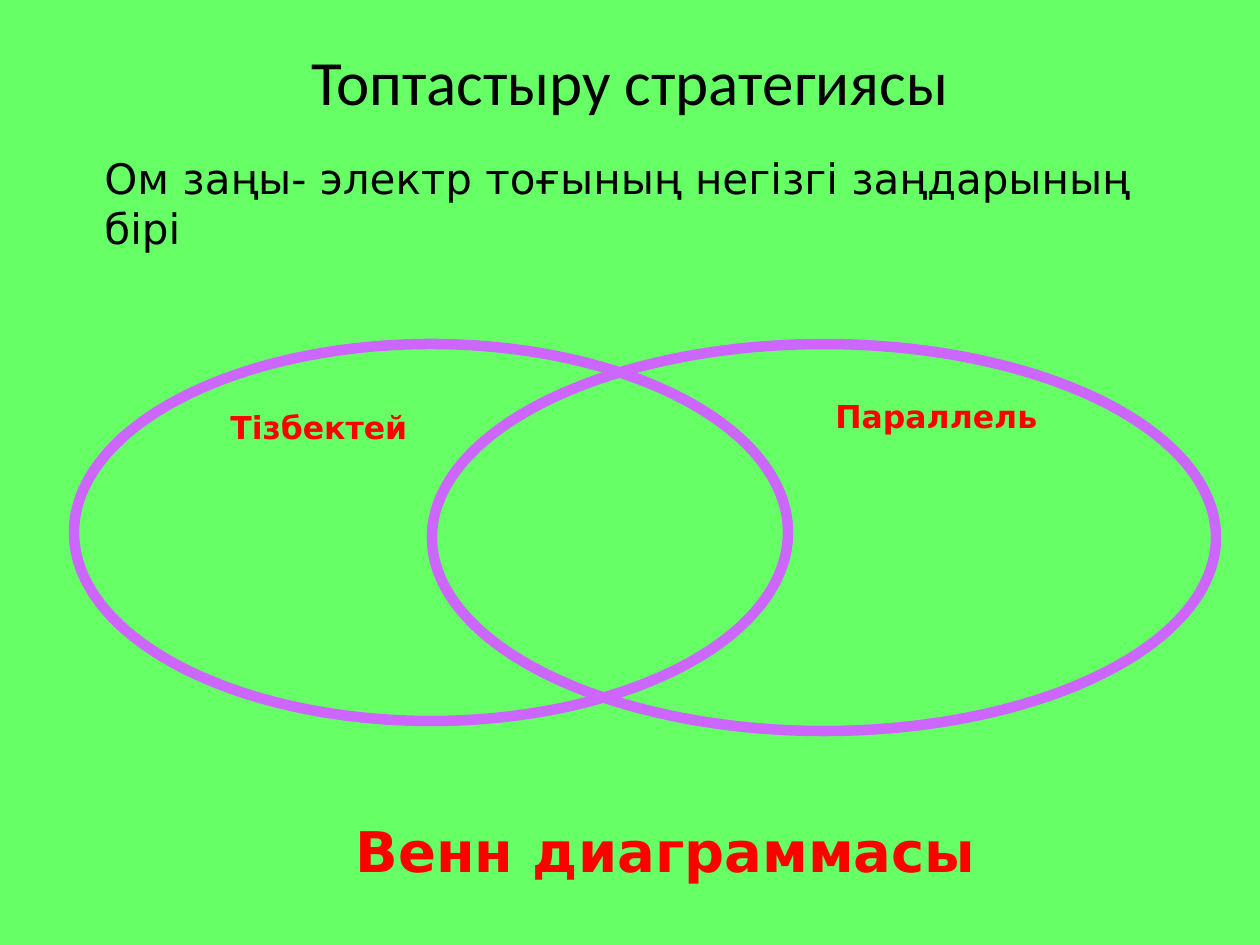
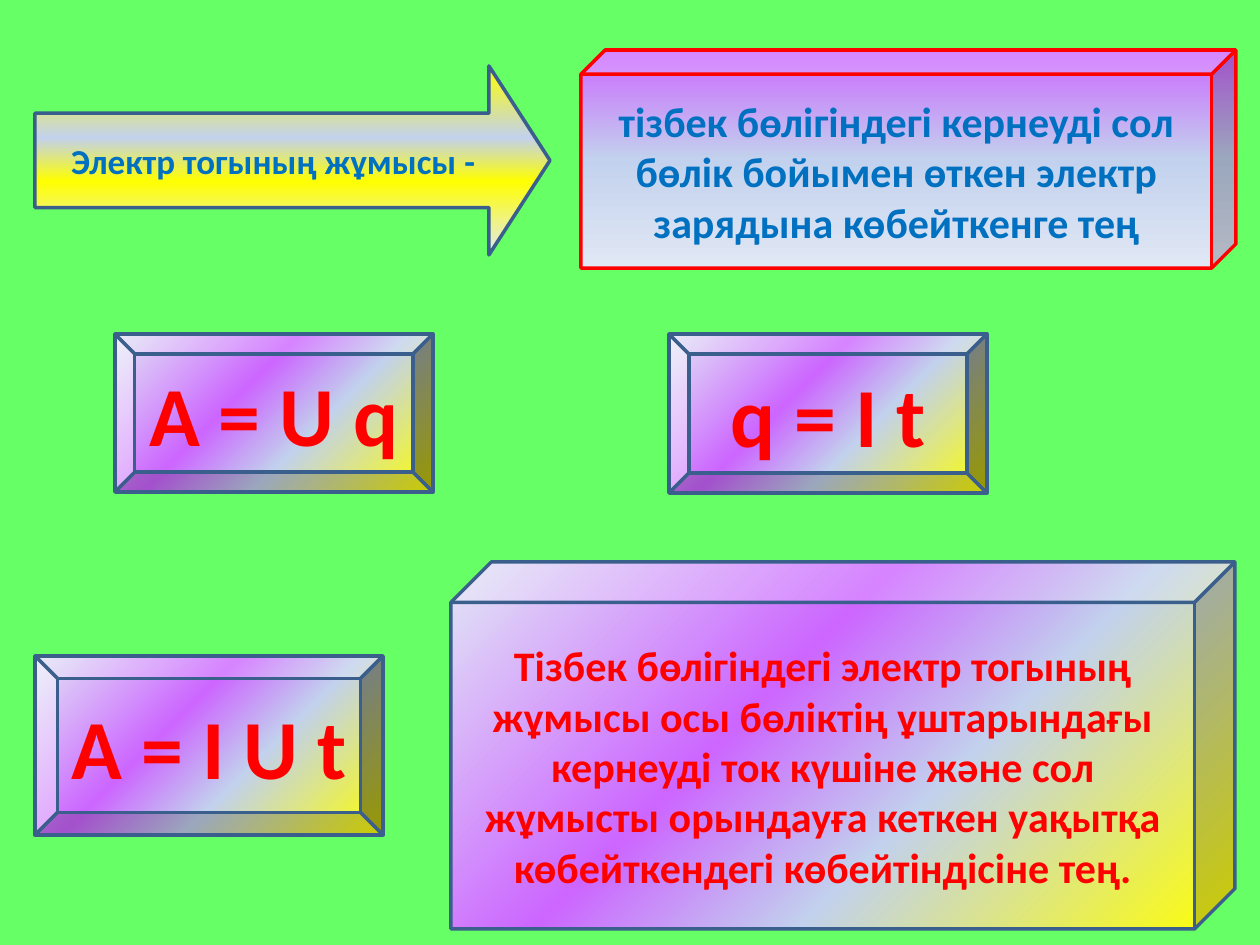
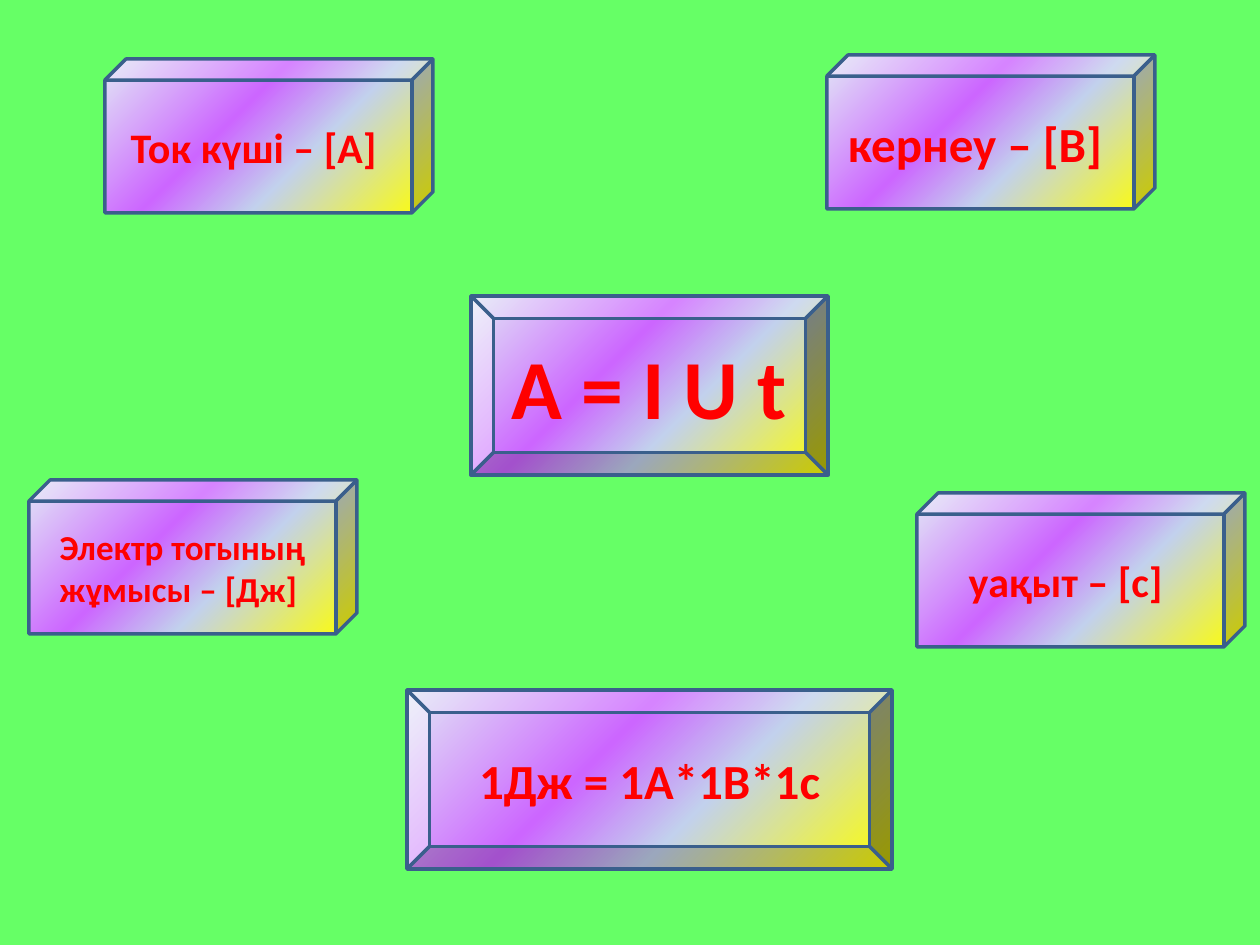
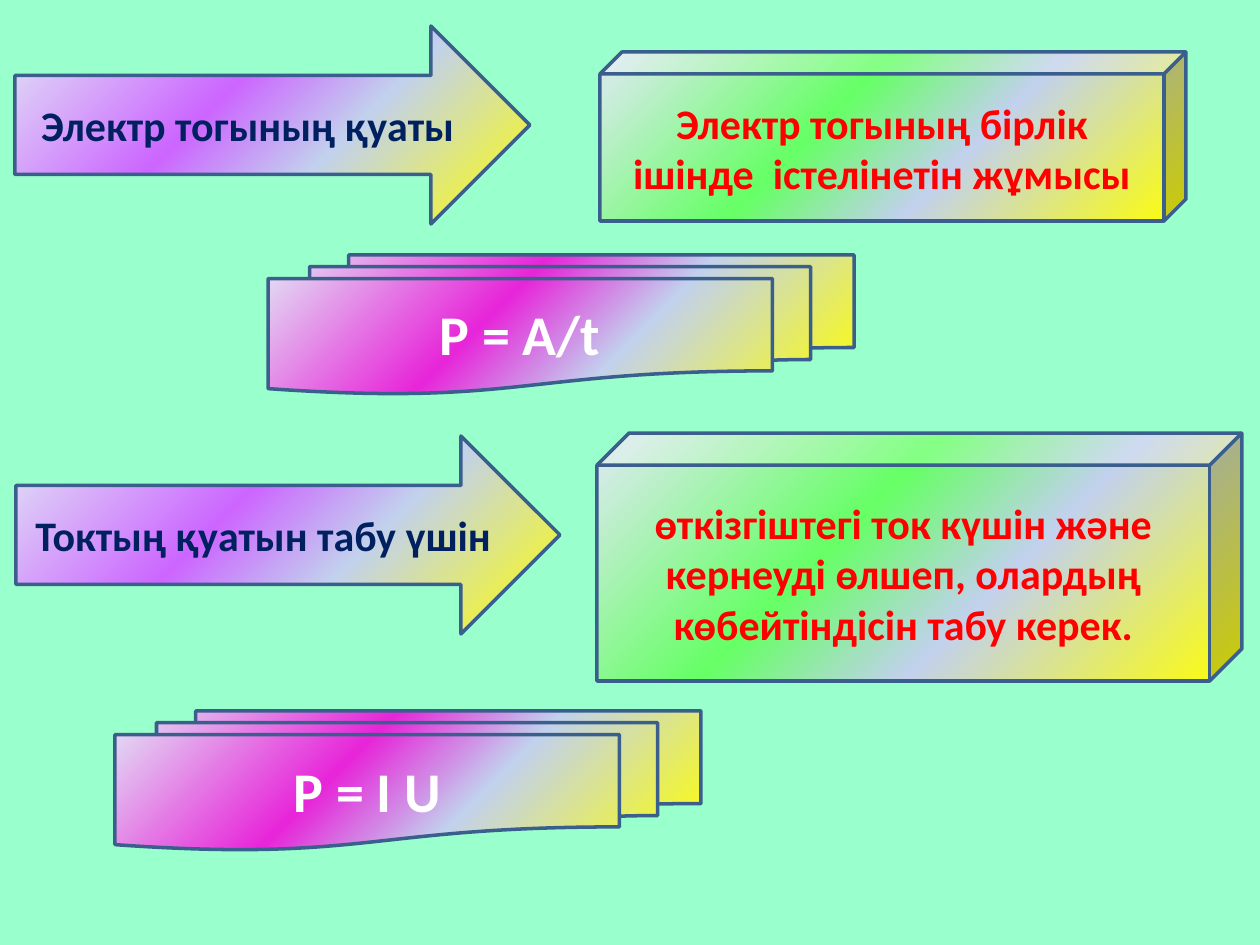
"""Build four slides on electric work and power with Venn, arrow and block shapes."""
from dataclasses import dataclass
from typing import Optional

from lxml.etree import SubElement
from pptx import Presentation
from pptx.dml.color import RGBColor
from pptx.enum.shapes import MSO_SHAPE
from pptx.enum.text import MSO_ANCHOR, MSO_AUTO_SIZE, PP_ALIGN
from pptx.oxml.ns import qn
from pptx.shapes.autoshape import Shape
from pptx.slide import Slide
from pptx.util import Pt

EMU_PER_PX = 914400 / 126
SLIDE_WIDTH, SLIDE_HEIGHT = 1260, 945
BLANK_LAYOUT = 6

GREEN = RGBColor(0x66, 0xFF, 0x66)
MINT = RGBColor(0x99, 0xFF, 0xCC)
VIOLET = RGBColor(0xCC, 0x66, 0xFF)
MAGENTA = RGBColor(0xE7, 0x25, 0xD9)
YELLOW = RGBColor(0xFF, 0xFF, 0x00)
PALE_BLUE = RGBColor(0xC2, 0xD1, 0xED)
ICE = RGBColor(0xE1, 0xE8, 0xF5)
RED = RGBColor(0xFF, 0x00, 0x00)
BLUE = RGBColor(0x00, 0x70, 0xC0)
NAVY = RGBColor(0x00, 0x20, 0x60)
OUTLINE = RGBColor(0x3A, 0x5F, 0x8C)
BLACK = RGBColor(0x00, 0x00, 0x00)
WHITE = RGBColor(0xFF, 0xFF, 0xFF)

HEADING_FONT = "Calibri"
LABEL_FONT = "DejaVu Sans"

ARROW = MSO_SHAPE.RIGHT_ARROW
CUBE = MSO_SHAPE.CUBE
BEVEL = MSO_SHAPE.BEVEL
DOCUMENTS = MSO_SHAPE.FLOWCHART_MULTIDOCUMENT


@dataclass(frozen=True)
class Box:
    """A rectangle in px."""
    left: int
    top: int
    width: int
    height: int

    def emu(self) -> tuple[int, ...]:
        """Return the rectangle in EMU."""
        return tuple(to_emu(value) for value in
                     (self.left, self.top, self.width, self.height))


@dataclass(frozen=True)
class Gradient:
    """Colour stops in percent, linear downwards or spreading from the bottom right."""
    stops: tuple[tuple[int, RGBColor], ...]
    linear: bool = False


@dataclass(frozen=True)
class Label:
    """A free text on the slide."""
    text: str
    box: Box
    size: int
    color: RGBColor = RED
    font: str = LABEL_FONT
    bold: bool = True
    wrap: bool = False
    align: PP_ALIGN = PP_ALIGN.LEFT
    anchor: MSO_ANCHOR = MSO_ANCHOR.TOP


@dataclass(frozen=True)
class Block:
    """A gradient preset shape holding bold centred text."""
    kind: MSO_SHAPE
    text: str
    box: Box
    size: int
    gradient: Gradient
    color: RGBColor = RED
    line: RGBColor = OUTLINE
    adjustments: tuple[float, ...] = ()


def accent_stops(accent: RGBColor) -> tuple[tuple[int, RGBColor], ...]:
    """Return the shared four stops around one accent colour."""
    return (0, YELLOW), (38, PALE_BLUE), (61, accent), (100, ICE)


VIOLET_GLOW = Gradient(accent_stops(VIOLET))
GREEN_GLOW = Gradient(accent_stops(GREEN))
MAGENTA_GLOW = Gradient(accent_stops(MAGENTA))
YELLOW_FADE = Gradient(accent_stops(YELLOW), linear=True)
VIOLET_FADE = Gradient(((0, VIOLET), (50, PALE_BLUE), (100, ICE)), linear=True)

VENN_ELLIPSES = (Box(74, 344, 714, 377), Box(432, 344, 784, 387))
VENN_LABELS = (
    Label("Топтастыру стратегиясы", Box(63, 38, 1134, 84), 36, BLACK, HEADING_FONT,
          bold=False, wrap=True, align=PP_ALIGN.CENTER, anchor=MSO_ANCHOR.MIDDLE),
    Label("Тізбектей", Box(218, 402, 213, 50), 18),
    Label("Параллель", Box(823, 391, 237, 50), 18),
    Label("Венн диаграммасы", Box(343, 810, 650, 81), 32),
    Label("Ом заңы- электр тоғының негізгі заңдарының бірі",
          Box(92, 146, 1100, 63), 24, BLACK, bold=False, wrap=True),
)


def formula(text: str, box: Box, size: int = 48) -> Block:
    """Describe a bevelled formula plate."""
    return Block(BEVEL, text, box, size, VIOLET_GLOW)


def quantity(text: str, left: int, top: int, size: int) -> Block:
    """Describe a cube naming a quantity and its unit."""
    return Block(CUBE, text, Box(left, top, 328, 154), size, VIOLET_GLOW,
                 adjustments=(0.137,))


def power_topic(text: str, box: Box) -> Block:
    """Describe an arrow that introduces a statement on power."""
    return Block(ARROW, text, box, 24, VIOLET_GLOW, NAVY)


def power_statement(text: str, box: Box) -> Block:
    """Describe a green cube with a statement on power."""
    return Block(CUBE, text, box, 24, GREEN_GLOW, adjustments=(0.13,))


def power_formula(text: str, left: int, top: int) -> Block:
    """Describe a stack of documents with a power formula."""
    return Block(DOCUMENTS, text, Box(left, top, 586, 139), 32, MAGENTA_GLOW, WHITE)


WORK_BLOCKS = (
    Block(ARROW, "Электр тогының жұмысы - ", Box(35, 66, 515, 189), 20,
          YELLOW_FADE, BLUE, adjustments=(0.5, 0.323)),
    Block(CUBE, "тізбек бөлігіндегі кернеуді сол бөлік бойымен өткен электр "
          "зарядына көбейткенге тең", Box(581, 50, 655, 218), 24,
          VIOLET_FADE, BLUE, RED, (0.111,)),
    formula("A = U q", Box(115, 334, 318, 158)),
    formula("q = I t", Box(669, 334, 318, 159)),
    formula("A = I U t", Box(35, 656, 348, 179)),
    Block(CUBE, "Тізбек бөлігіндегі электр тогының жұмысы осы бөліктің "
          "ұштарындағы кернеуді ток күшіне және сол жұмысты орындауға кеткен "
          "уақытқа көбейткендегі көбейтіндісіне тең.",
          Box(451, 562, 784, 367), 24, VIOLET_GLOW, adjustments=(0.11,)),
)
UNIT_BLOCKS = (
    formula("A = I U t", Box(471, 296, 357, 179)),
    quantity("Электр тогының жұмысы – [Дж] ", 29, 480, 20),
    quantity("кернеу – [В] ", 827, 55, 28),
    quantity("Ток күші – [А] ", 105, 59, 24),
    quantity("уақыт – [с] ", 917, 493, 24),
    formula("1Дж = 1А*1В*1с", Box(407, 690, 485, 179), 28),
)
POWER_BLOCKS = (
    power_topic("Электр тогының қуаты", Box(15, 26, 515, 198)),
    power_statement("Электр тогының бірлік ішінде  істелінетін жұмысы",
                    Box(600, 52, 586, 169)),
    power_formula("P = A/t", 268, 255),
    power_formula("P = I U", 115, 711),
    power_statement("өткізгіштегі ток күшін және кернеуді өлшеп, олардың "
                    "көбейтіндісін табу керек.", Box(597, 433, 645, 248)),
    power_topic("Токтың қуатын табу үшін", Box(16, 436, 544, 198)),
)


def to_emu(pixels: int) -> int:
    """Turn px into EMU."""
    return round(pixels * EMU_PER_PX)


def add_slide(presentation: Presentation, background: RGBColor) -> Slide:
    """Add a blank slide with a plain background."""
    slide = presentation.slides.add_slide(presentation.slide_layouts[BLANK_LAYOUT])
    slide.background.fill.solid()
    slide.background.fill.fore_color.rgb = background
    return slide


def write_text(shape: Shape, text: str, size: int, color: RGBColor, font: str,
               bold: bool, align: PP_ALIGN, anchor: MSO_ANCHOR) -> None:
    """Write one formatted paragraph into a shape."""
    text_frame = shape.text_frame
    text_frame.text = text
    text_frame.vertical_anchor = anchor
    paragraph = text_frame.paragraphs[0]
    paragraph.alignment = align
    run = paragraph.runs[0]
    run.font.size = Pt(size)
    run.font.name = font
    run.font.bold = bold
    run.font.color.rgb = color


def set_gradient(shape: Shape, gradient: Gradient) -> None:
    """Fill a shape with a gradient."""
    shape.fill.gradient()
    fill = shape.element.spPr.find(qn("a:gradFill"))
    fill.clear()
    stop_list = SubElement(fill, qn("a:gsLst"))
    for position, color in gradient.stops:
        stop = SubElement(stop_list, qn("a:gs"), pos=str(position * 1000))
        SubElement(stop, qn("a:srgbClr"), val=str(color))
    if gradient.linear:
        SubElement(fill, qn("a:lin"), ang="5400000", scaled="0")
    else:
        spread = SubElement(fill, qn("a:path"), path="circle")
        SubElement(spread, qn("a:fillToRect"), l="100000", t="100000")


def add_outlined(slide: Slide, kind: MSO_SHAPE, box: Box, line: RGBColor,
                 line_width: int, gradient: Optional[Gradient] = None) -> Shape:
    """Add a preset shape with an outline and an optional gradient."""
    shape = slide.shapes.add_shape(kind, *box.emu())
    shape.shadow.inherit = False
    shape.line.color.rgb = line
    shape.line.width = Pt(line_width)
    if gradient:
        set_gradient(shape, gradient)
    else:
        shape.fill.background()
    return shape


def add_label(slide: Slide, label: Label) -> None:
    """Add a text box."""
    shape = slide.shapes.add_textbox(*label.box.emu())
    write_text(shape, label.text, label.size, label.color, label.font,
               label.bold, label.align, label.anchor)
    shape.text_frame.word_wrap = label.wrap
    if not label.wrap:
        shape.text_frame.auto_size = MSO_AUTO_SIZE.SHAPE_TO_FIT_TEXT


def add_block(slide: Slide, block: Block) -> None:
    """Add a gradient block with its text."""
    shape = add_outlined(slide, block.kind, block.box, block.line, 2, block.gradient)
    for index, value in enumerate(block.adjustments):
        shape.adjustments[index] = value
    write_text(shape, block.text, block.size, block.color, HEADING_FONT,
               True, PP_ALIGN.CENTER, MSO_ANCHOR.MIDDLE)


def main() -> None:
    """Build and save the presentation."""
    presentation = Presentation()
    presentation.slide_width = to_emu(SLIDE_WIDTH)
    presentation.slide_height = to_emu(SLIDE_HEIGHT)

    venn_slide = add_slide(presentation, GREEN)
    for ellipse in VENN_ELLIPSES:
        add_outlined(venn_slide, MSO_SHAPE.OVAL, ellipse, VIOLET, 6)
    for label in VENN_LABELS:
        add_label(venn_slide, label)

    for background, blocks in ((GREEN, WORK_BLOCKS), (GREEN, UNIT_BLOCKS),
                               (MINT, POWER_BLOCKS)):
        slide = add_slide(presentation, background)
        for block in blocks:
            add_block(slide, block)

    presentation.save("out.pptx")


if __name__ == "__main__":
    main()
